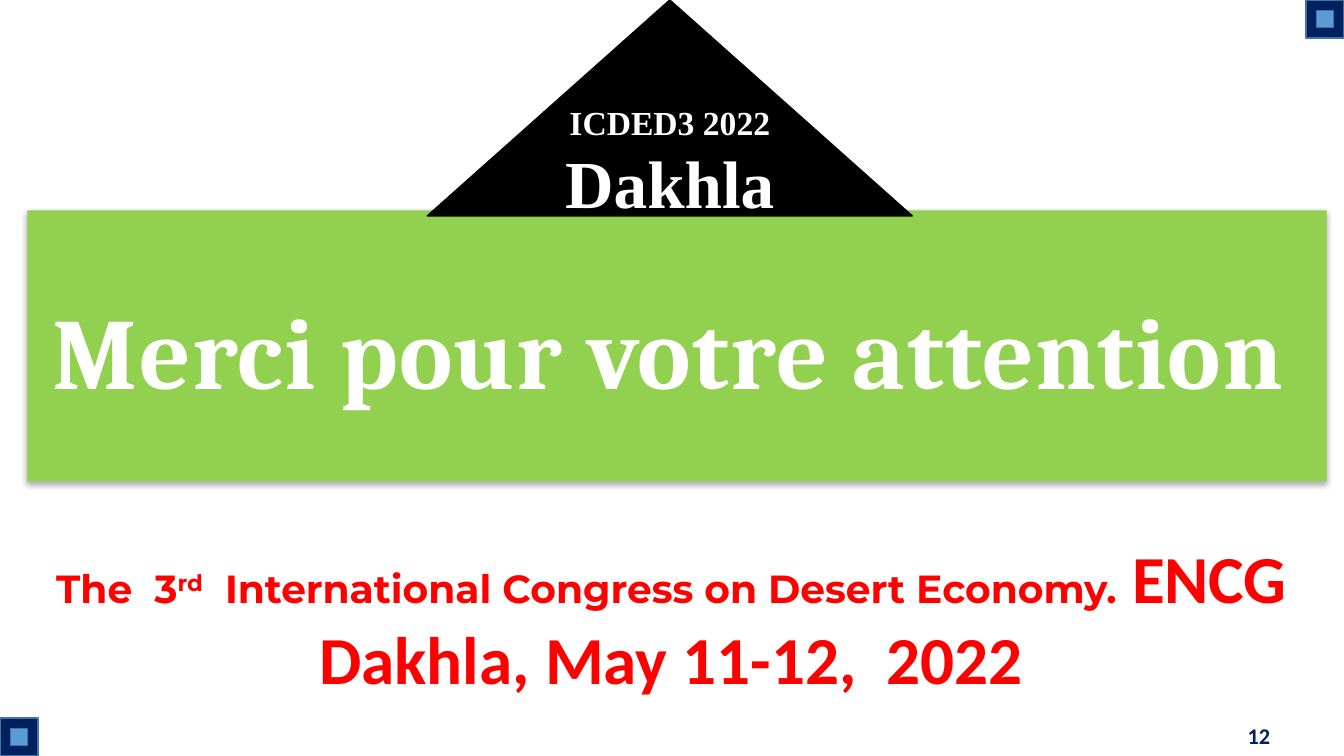
from dataclasses import dataclass

import lxml.etree
import pptx
import pptx.dml.color
import pptx.enum.shapes
import pptx.enum.text
import pptx.oxml
import pptx.oxml.ns
import pptx.util
from pptx.util import Cm, Pt

RGB = pptx.dml.color.RGBColor
ALIGN = pptx.enum.text.PP_ALIGN
ANCHOR = pptx.enum.text.MSO_ANCHOR
SHAPE = pptx.enum.shapes.MSO_SHAPE
qn = pptx.oxml.ns.qn


@dataclass(frozen=True)
class Theme:
    navy: RGB = RGB(0x00, 0x20, 0x60)
    blue: RGB = RGB(0x5B, 0x9B, 0xD5)
    outline: RGB = RGB(0x43, 0x73, 0x9E)
    green: RGB = RGB(0x92, 0xD0, 0x50)
    red: RGB = RGB(0xFF, 0x00, 0x00)
    black: RGB = RGB(0x00, 0x00, 0x00)
    white: RGB = RGB(0xFF, 0xFF, 0xFF)
    thanks: Pt = Pt(72)
    large: Pt = Pt(48)
    congress: Pt = Pt(28)
    edition: Pt = Pt(24)
    page: Pt = Pt(16)


@dataclass(frozen=True)
class Box:
    """Position and size in centimetres."""
    left: float
    top: float
    width: float
    height: float

    def lengths(self) -> tuple:
        return Cm(self.left), Cm(self.top), Cm(self.width), Cm(self.height)

    def inset(self, margin: float) -> "Box":
        return Box(self.left + margin, self.top + margin,
                   self.width - 2 * margin, self.height - 2 * margin)


@dataclass(frozen=True)
class TextRun:
    text: str
    name: str
    size: Pt
    baseline: int = 0


THEME = Theme()
SLIDE_WIDTH, SLIDE_HEIGHT = 33.87, 19.05
MARKER = 0.96
CORNERS = (Box(0, SLIDE_HEIGHT - MARKER, MARKER, MARKER),
           Box(SLIDE_WIDTH - MARKER, 0, MARKER, MARKER))
VENUE = (
    TextRun("The  3", "Montserrat", THEME.congress),
    TextRun("rd", "Montserrat", THEME.congress, 30000),
    TextRun("  International Congress on Desert Economy.", "Montserrat", THEME.congress),
    TextRun(" ENCG Dakhla, May 11-12,  2022", "Calibri", THEME.large),
)


def set_font(font, name: str, size: Pt, color: RGB) -> None:
    font.name, font.size, font.bold = name, size, True
    font.color.rgb = color


def add_filled_shape(slide, kind: SHAPE, box: Box, fill: RGB, line: RGB):
    shape = slide.shapes.add_shape(kind, *box.lengths())
    shape.shadow.inherit = False
    shape.fill.solid()
    shape.fill.fore_color.rgb = fill
    shape.line.color.rgb = line
    shape.line.width = Pt(1)
    return shape


def add_text_box(slide, box: Box):
    frame = slide.shapes.add_textbox(*box.lengths()).text_frame
    frame.word_wrap = True
    frame.vertical_anchor = ANCHOR.MIDDLE
    return frame


def add_drop_shadow(shape) -> None:
    shape.shadow.inherit = False
    effects = shape._element.spPr.find(qn("a:effectLst"))
    shadow = lxml.etree.SubElement(effects, qn("a:outerShdw"), blurRad=str(Pt(3.5)),
                                   dist=str(Pt(2.2)), dir="5400000", rotWithShape="0")
    color = lxml.etree.SubElement(shadow, qn("a:srgbClr"), val=str(THEME.black))
    lxml.etree.SubElement(color, qn("a:alpha"), val="32000")


def format_title(title) -> None:
    title.left, title.top, title.width, title.height = Box(0.69, 5.3, 32.74, 6.83).lengths()
    title.fill.solid()
    title.fill.fore_color.rgb = THEME.green
    add_drop_shadow(title)
    frame = title.text_frame
    frame.text = "Merci pour votre attention"
    frame.word_wrap = True
    frame.auto_size = pptx.enum.text.MSO_AUTO_SIZE.NONE
    frame.vertical_anchor = ANCHOR.MIDDLE
    paragraph = frame.paragraphs[0]
    paragraph.alignment = ALIGN.LEFT
    paragraph.line_spacing = 1.05
    set_font(paragraph.font, "Cambria", THEME.thanks, THEME.white)
    properties = paragraph._p.get_or_add_pPr()
    properties.set("marL", str(Cm(1.52)))
    properties.set("indent", str(Cm(-1.14)))
    paragraph.runs[0]._r.get_or_add_rPr().set("spc", "100")


def add_page_number(slide) -> None:
    frame = add_text_box(slide, Box(24.64, 18.03, 7.62, 1.02))
    frame.text = "12"
    paragraph = frame.paragraphs[0]
    paragraph.alignment = ALIGN.RIGHT
    set_font(paragraph.font, "Calibri", THEME.page, THEME.navy)


def add_venue(slide) -> None:
    paragraph = add_text_box(slide, Box(0.53, 13.12, 32.79, 4.85)).paragraphs[0]
    paragraph.alignment = ALIGN.CENTER
    for item in VENUE:
        run = paragraph.add_run()
        run.text = item.text
        set_font(run.font, item.name, item.size, THEME.red)
        if item.baseline:
            run._r.get_or_add_rPr().set("baseline", str(item.baseline))


def add_roof(slide) -> None:
    roof = add_filled_shape(slide, SHAPE.ISOSCELES_TRIANGLE, Box(10.77, 0, 12.22, 5.44),
                            THEME.black, THEME.black)
    frame = roof.text_frame
    frame.text = "ICDED3 2022\nDakhla"
    frame.vertical_anchor = ANCHOR.MIDDLE
    for paragraph, size in zip(frame.paragraphs, (THEME.edition, THEME.large)):
        paragraph.alignment = ALIGN.CENTER
        set_font(paragraph.font, "Times New Roman", size, THEME.white)


def main() -> None:
    presentation = pptx.Presentation()
    presentation.slide_width, presentation.slide_height = Cm(SLIDE_WIDTH), Cm(SLIDE_HEIGHT)
    slide = presentation.slides.add_slide(presentation.slide_layouts.get_by_name("Title Only"))
    format_title(slide.shapes.title)
    for corner in CORNERS:
        add_filled_shape(slide, SHAPE.RECTANGLE, corner, THEME.navy, THEME.outline)
        add_filled_shape(slide, SHAPE.RECTANGLE, corner.inset(0.27), THEME.blue, THEME.outline)
    add_page_number(slide)
    add_venue(slide)
    add_roof(slide)
    presentation.save("out.pptx")


if __name__ == "__main__":
    main()
